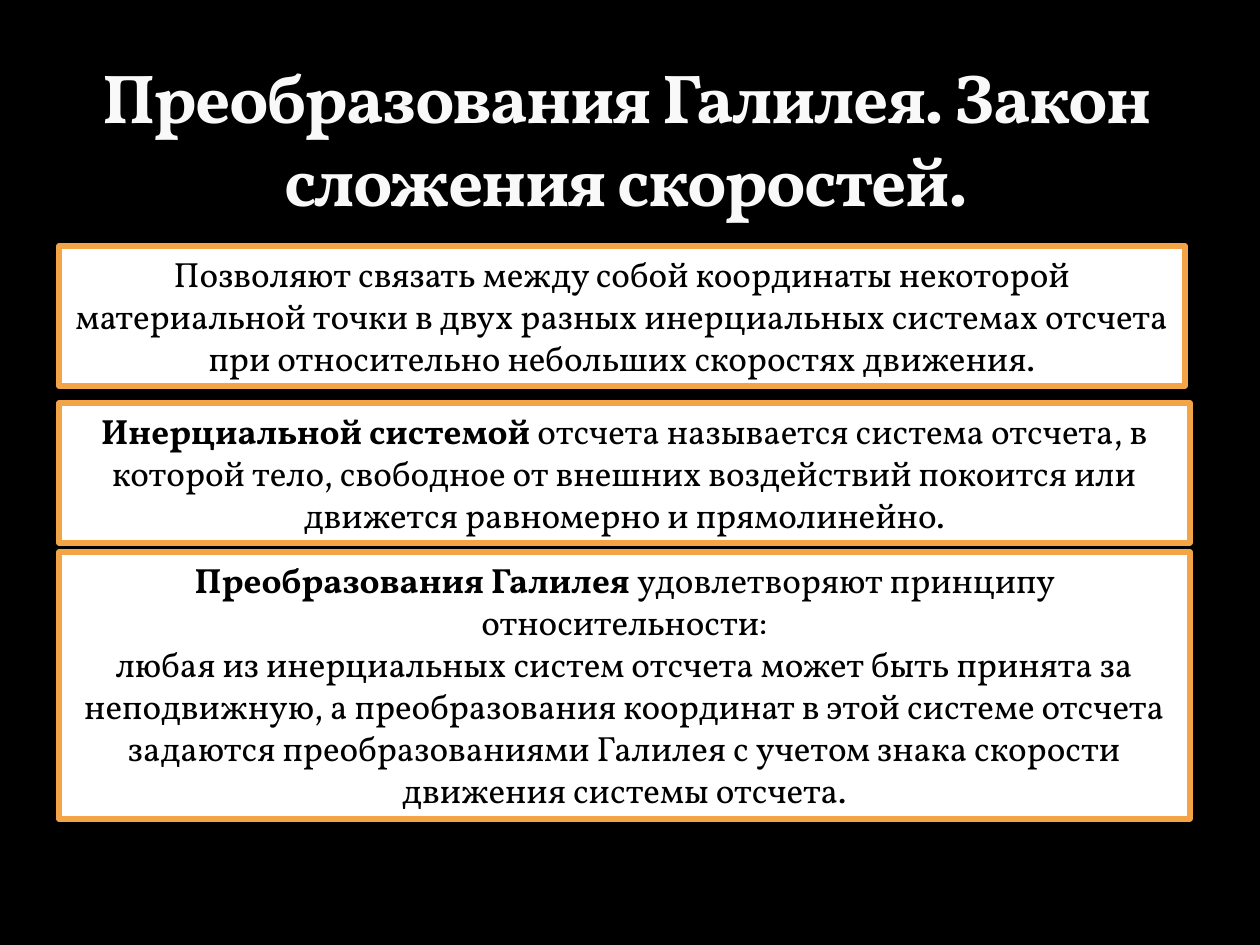
from pptx import Presentation
from pptx.dml.color import RGBColor
from pptx.enum.shapes import MSO_SHAPE
from pptx.enum.text import MSO_ANCHOR, PP_ALIGN
from pptx.util import Emu, Pt

FONT = "Vollkorn"
BLACK = RGBColor(0x00, 0x00, 0x00)
WHITE = RGBColor(0xFF, 0xFF, 0xFF)
OFF_WHITE = RGBColor(0xF9, 0xF9, 0xF9)
ORANGE = RGBColor(0xF3, 0xA4, 0x47)

TITLE = "Преобразования Галилея. Закон сложения скоростей."
STATEMENTS = [
    ((59, 246, 1126, 140), [
        [("Позволяют связать между собой координаты некоторой материальной "
          "точки в двух разных инерциальных системах отсчета при относительно "
          "небольших скоростях движения.", False)],
    ]),
    ((59, 403, 1131, 140), [
        [("Инерциальной системой ", True),
         ("отсчета называется система отсчета, в которой тело, свободное от "
          "внешних воздействий покоится или движется равномерно и "
          "прямолинейно.", False)],
    ]),
    ((59, 552, 1131, 267), [
        [("Преобразования Галилея", True),
         (" удовлетворяют принципу относительности:", False)],
        [("любая из инерциальных систем отсчета может быть принята за "
          "неподвижную, а преобразования координат в этой системе отсчета "
          "задаются преобразованиями Галилея с учетом знака скорости движения "
          "системы отсчета.", False)],
    ]),
]


def px(n):
    return Emu(round(n * 914400 / 126))


def add_run(p, text, size, color, bold):
    r = p.add_run()
    r.text = text
    r.font.name = FONT
    r.font.size = Pt(size)
    r.font.bold = bold
    r.font.color.rgb = color
    return r


def add_title(s, box, text):
    tf = s.shapes.add_textbox(*map(px, box)).text_frame
    tf.word_wrap = True
    tf.vertical_anchor = MSO_ANCHOR.BOTTOM
    p = tf.paragraphs[0]
    p.alignment = PP_ALIGN.CENTER
    r = add_run(p, text, 39.6, OFF_WHITE, True)
    r.font._element.set("spc", "-100")


def add_statement(s, box, paragraphs):
    sp = s.shapes.add_shape(MSO_SHAPE.RECTANGLE, *map(px, box))
    sp.shadow.inherit = False
    sp.fill.solid()
    sp.fill.fore_color.rgb = WHITE
    sp.line.color.rgb = ORANGE
    sp.line.width = Pt(3)
    tf = sp.text_frame
    tf.word_wrap = True
    tf.vertical_anchor = MSO_ANCHOR.TOP
    for i, runs in enumerate(paragraphs):
        p = tf.add_paragraph() if i else tf.paragraphs[0]
        p.alignment = PP_ALIGN.CENTER
        for text, bold in runs:
            add_run(p, text, 20, BLACK, bold)


def main():
    prs = Presentation()
    prs.slide_width, prs.slide_height = px(1260), px(945)
    s = prs.slides.add_slide(prs.slide_layouts[6])
    s.background.fill.solid()
    s.background.fill.fore_color.rgb = BLACK
    add_title(s, (59, 59, 1134, 168), TITLE)
    for box, paragraphs in STATEMENTS:
        add_statement(s, box, paragraphs)
    prs.save("out.pptx")


if __name__ == "__main__":
    main()
